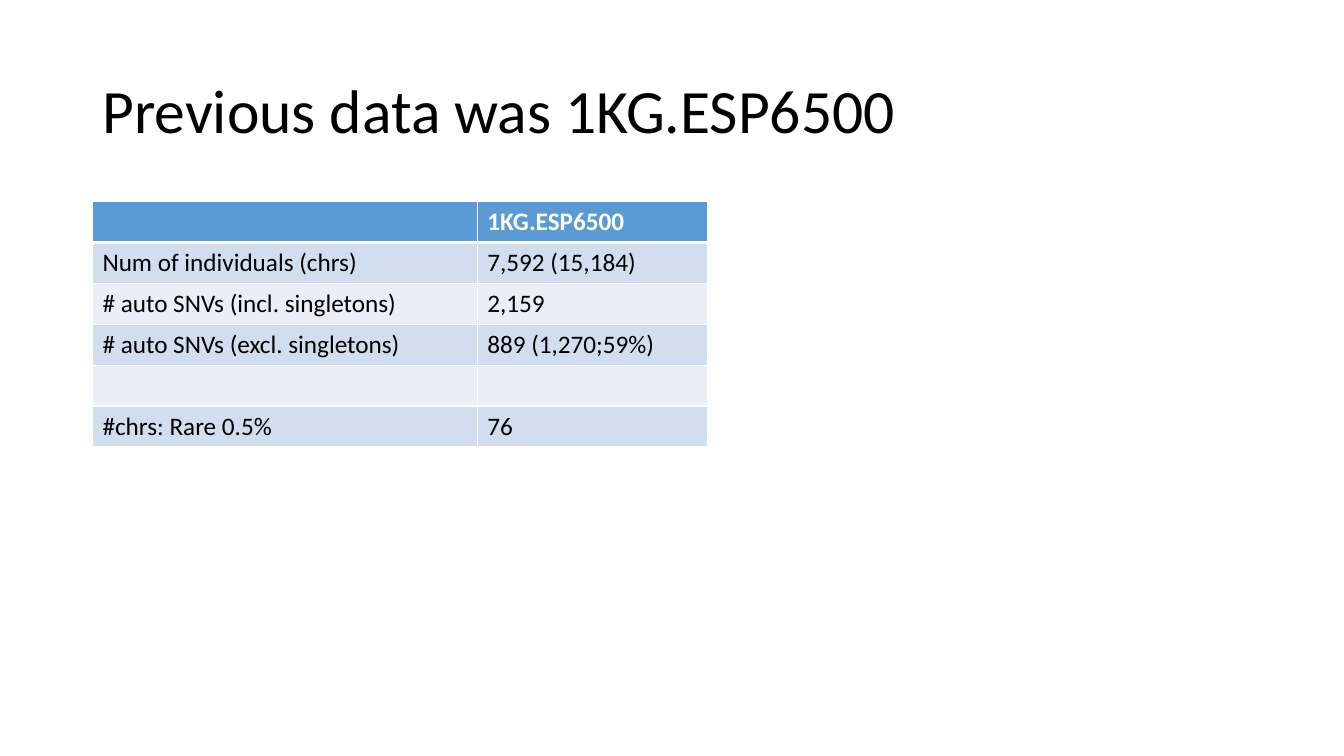
from lxml.etree import SubElement
from pptx import Presentation
from pptx.dml.color import RGBColor
from pptx.enum.text import MSO_ANCHOR
from pptx.oxml.ns import qn
from pptx.util import Cm, Pt

FONT = "Calibri"
BLACK = RGBColor(0x00, 0x00, 0x00)
WHITE = RGBColor(0xFF, 0xFF, 0xFF)
HEADER_BLUE = RGBColor(0x5B, 0x9B, 0xD5)
BAND_DARK = RGBColor(0xD2, 0xDE, 0xEF)
BAND_LIGHT = RGBColor(0xEA, 0xEF, 0xF7)

LEFT = Cm(2.33)
COLUMN_WIDTHS = [Cm(9.7), Cm(5.8)]
ROW_HEIGHT = Cm(1.03)
SNV_ROWS = [
    ("", "1KG.ESP6500"),
    ("Num of individuals (chrs)", "7,592 (15,184)"),
    ("# auto SNVs (incl. singletons)", "2,159"),
    ("# auto SNVs (excl. singletons)", "889 (1,270;59%)"),
    ("", ""),
    ("#chrs: Rare 0.5%", "76"),
]


def format_runs(paragraph, size, color, bold=False):
    for run in paragraph.runs:
        run.font.name = FONT
        run.font.size = Pt(size)
        run.font.bold = bold
        run.font.color.rgb = color


def add_title(slide, text):
    title = slide.shapes.add_textbox(LEFT, Cm(1.01), Cm(29.21), Cm(3.68))
    frame = title.text_frame
    frame.word_wrap = True
    frame.vertical_anchor = MSO_ANCHOR.MIDDLE
    frame.text = text
    frame.paragraphs[0].line_spacing = 0.9
    format_runs(frame.paragraphs[0], 44, BLACK)


def set_borders(cell, widths):
    """Draw white borders; widths maps a side (L, R, T, B) to points.

    Call before filling the cell: the schema puts lines ahead of the fill.
    """
    properties = cell._tc.get_or_add_tcPr()
    for side, width in widths.items():
        line = SubElement(properties, qn(f"a:ln{side}"), w=str(Pt(width)))
        fill = SubElement(line, qn("a:solidFill"))
        SubElement(fill, qn("a:srgbClr"), val=str(WHITE))


def style_cell(cell, row):
    is_header = row == 0
    set_borders(cell, {
        "L": 1,
        "R": 1,
        "T": 3 if row == 1 else 1,
        "B": 3 if is_header else 1,
    })
    band = BAND_DARK if row % 2 else BAND_LIGHT
    cell.fill.solid()
    cell.fill.fore_color.rgb = HEADER_BLUE if is_header else band
    color = WHITE if is_header else BLACK
    format_runs(cell.text_frame.paragraphs[0], 18, color, is_header)


def add_data_table(slide, rows):
    table = slide.shapes.add_table(
        len(rows), len(COLUMN_WIDTHS), LEFT, Cm(5.08),
        sum(COLUMN_WIDTHS), ROW_HEIGHT * len(rows),
    ).table
    for column, width in zip(table.columns, COLUMN_WIDTHS):
        column.width = width
    for r, values in enumerate(rows):
        for c, value in enumerate(values):
            cell = table.cell(r, c)
            cell.text_frame.text = value
            style_cell(cell, r)


def main():
    presentation = Presentation()
    presentation.slide_width = Cm(33.87)
    presentation.slide_height = Cm(19.05)
    slide = presentation.slides.add_slide(presentation.slide_layouts[6])
    add_title(slide, "Previous data was 1KG.ESP6500")
    add_data_table(slide, SNV_ROWS)
    presentation.save("out.pptx")


if __name__ == "__main__":
    main()
